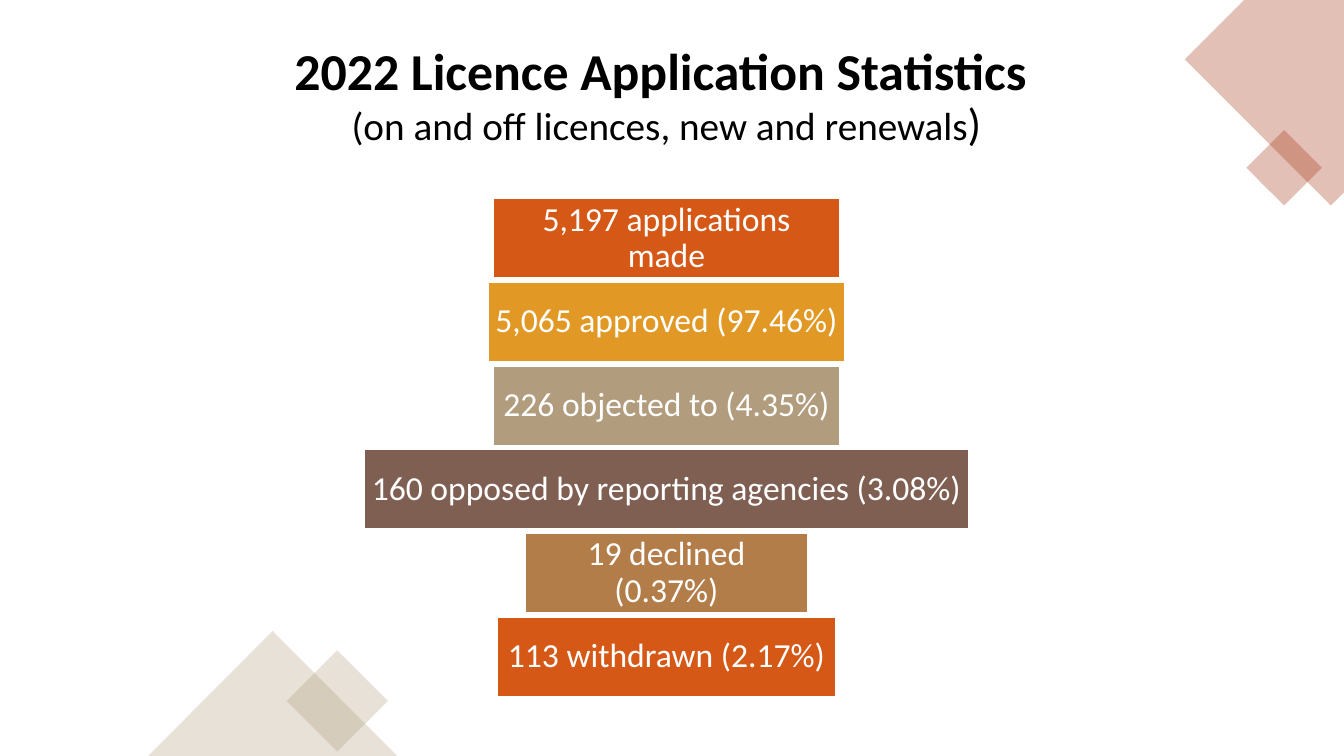
import pptx
import pptx.util
import pptx.dml.color
import pptx.enum.shapes
import pptx.enum.text
import pptx.oxml.ns
from lxml import etree

SLIDE_W, SLIDE_H = 13.33, 7.5
FONT = "Calibri"
COLORS = {
    "black": "000000", "white": "FFFFFF", "orange": "D55816", "amber": "E19825",
    "sand": "B19C7D", "brown": "7F5F52", "copper": "B27D49", "rust": "A5300F",
}
HEADING = ("2022 Licence Application Statistics ", 37, True)
SUBHEADING = [("(on and off licences, new and renewals", 28, False), (")", 32, False)]
STATISTICS = [
    ("5,197\u00a0applications made", 3.44, "orange"),
    ("5,065 approved (97.46%)", 3.54, "amber"),
    ("226 objected to (4.35%)", 3.44, "sand"),
    ("160 opposed by reporting agencies (3.08%)", 6.0, "brown"),
    ("19 declined (0.37%)", 2.81, "copper"),
    ("113 withdrawn (2.17%)", 3.35, "orange"),
]
BAR_CENTER, BAR_TOP, BAR_HEIGHT, BAR_PITCH, BAR_INSET = 6.61, 1.97, 0.79, 0.83, 0.07
CORNER_OUTLINE = [(13.33, 0), (12.34, 0), (11.75, 0.59), (13.2, 2.04), (13.33, 1.91)]
SHAPES = pptx.enum.shapes.MSO_SHAPE
DECORATIONS = [
    (SHAPES.RECTANGLE, (12.47, 1.4, 0.53, 0.53), 45, "rust"),
    (SHAPES.RECTANGLE, (2.99, 6.6, 0.71, 0.71), 45, "sand"),
    (SHAPES.ISOSCELES_TRIANGLE, (1.47, 6.26, 2.47, 1.24), 0, "sand"),
]


def inches(*lengths):
    return [pptx.util.Inches(length) for length in lengths]


def rgb(color):
    return pptx.dml.color.RGBColor.from_string(COLORS[color])


def add_run(paragraph, text, size, bold, color):
    run = paragraph.add_run()
    run.text = text
    run.font.name = FONT
    run.font.size = pptx.util.Pt(size)
    run.font.bold = bold
    run.font.color.rgb = rgb(color)


def center(frame):
    frame.vertical_anchor = pptx.enum.text.MSO_ANCHOR.MIDDLE
    paragraph = frame.paragraphs[0]
    paragraph.alignment = pptx.enum.text.PP_ALIGN.CENTER
    paragraph.line_spacing = 0.9
    return paragraph


def paint(shape, color):
    shape.shadow.inherit = False
    shape.fill.solid()
    shape.fill.fore_color.rgb = rgb(color)


def make_translucent(shape, color):
    paint(shape, color)
    shape.line.fill.background()
    fill_color = shape.fill._xPr.find(".//" + pptx.oxml.ns.qn("a:srgbClr"))
    etree.SubElement(fill_color, pptx.oxml.ns.qn("a:alpha"), val="30000")


def add_title(slide):
    title = slide.shapes.title
    title.left, title.top, title.width, title.height = inches(1.47, 0.35, 10.28, 1.24)
    title.text_frame.auto_size = pptx.enum.text.MSO_AUTO_SIZE.NONE
    paragraph = center(title.text_frame)
    add_run(paragraph, *HEADING, "black")
    paragraph.add_line_break()
    for part in SUBHEADING:
        add_run(paragraph, *part, "black")


def add_statistics(slide):
    for row, (statistic, width, color) in enumerate(STATISTICS):
        bar = slide.shapes.add_shape(SHAPES.RECTANGLE, *inches(
            BAR_CENTER - width / 2, BAR_TOP + row * BAR_PITCH, width, BAR_HEIGHT))
        paint(bar, color)
        bar.line.color.rgb = rgb("white")
        bar.line.width = pptx.util.Pt(1)
        frame = bar.text_frame
        frame.word_wrap = True
        frame.margin_left, frame.margin_right, frame.margin_top, frame.margin_bottom = inches(
            *[BAR_INSET] * 4)
        add_run(center(frame), statistic, 24, False, "white")


def add_decorations(slide):
    start, *corners = [inches(*point) for point in CORNER_OUTLINE]
    outline = slide.shapes.build_freeform(*start)
    outline.add_line_segments(corners, close=True)
    make_translucent(outline.convert_to_shape(), "rust")
    for preset, box, rotation, color in DECORATIONS:
        decoration = slide.shapes.add_shape(preset, *inches(*box))
        decoration.rotation = rotation
        make_translucent(decoration, color)


def main():
    deck = pptx.Presentation()
    deck.slide_width, deck.slide_height = inches(SLIDE_W, SLIDE_H)
    slide = deck.slides.add_slide(deck.slide_layouts[5])
    add_title(slide)
    add_statistics(slide)
    add_decorations(slide)
    deck.save("out.pptx")


if __name__ == "__main__":
    main()
